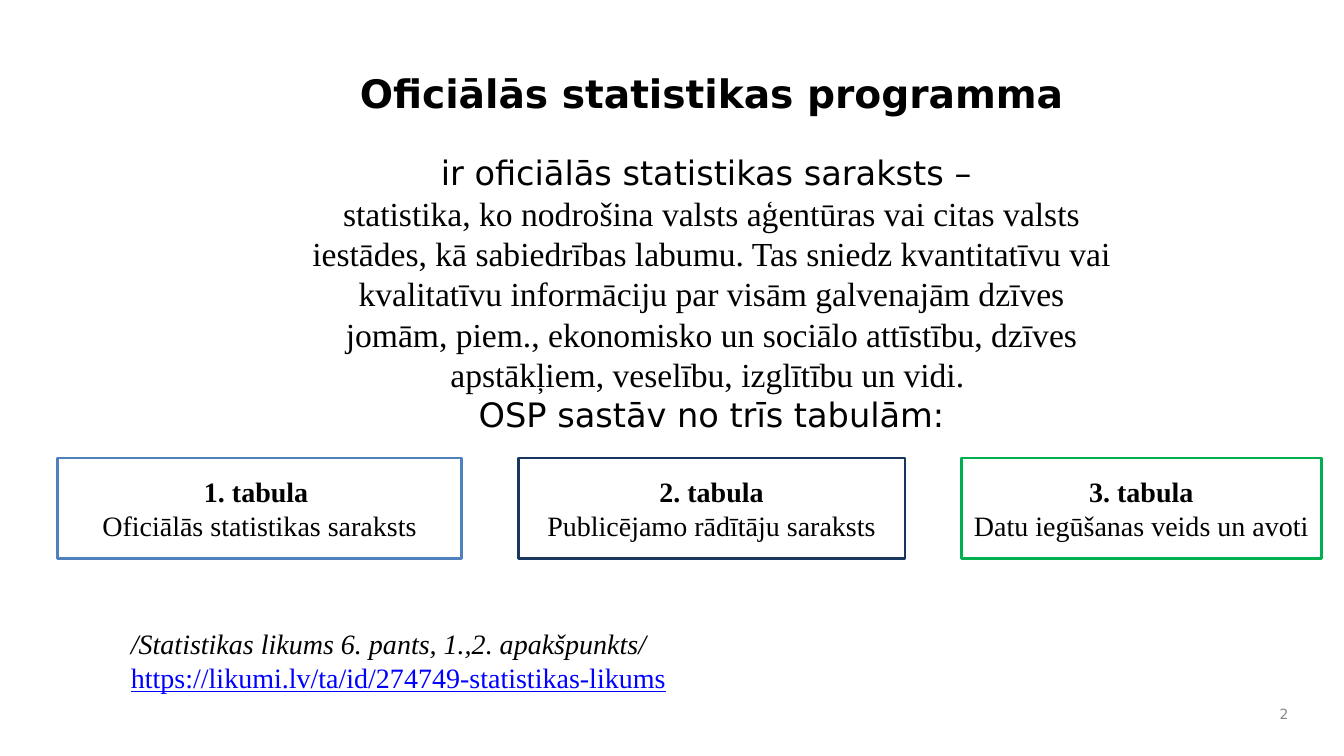
from dataclasses import dataclass

from pptx import Presentation
from pptx.dml.color import RGBColor
from pptx.enum.shapes import MSO_SHAPE
from pptx.enum.text import MSO_ANCHOR as Anchor
from pptx.enum.text import MSO_AUTO_SIZE as AutoSize
from pptx.enum.text import PP_ALIGN as Align
from pptx.util import Cm, Pt

BLACK = RGBColor(0x00, 0x00, 0x00)
WHITE = RGBColor(0xFF, 0xFF, 0xFF)
GREY = RGBColor(0x89, 0x89, 0x89)
LINK_BLUE = RGBColor(0x00, 0x00, 0xFF)
BLUE = RGBColor(0x4F, 0x81, 0xBD)
NAVY = RGBColor(0x17, 0x37, 0x5E)
GREEN = RGBColor(0x00, 0xB0, 0x50)

SANS = "DejaVu Sans"
SERIF = "Times New Roman"

CARD_LEFT, CARD_TOP, CARD_HEIGHT, CARD_GAP = 1.45, 11.54, 2.54, 1.42


@dataclass
class Line:
    text: str
    size: float
    font: str = SERIF
    color: RGBColor = BLACK
    bold: bool = False
    italic: bool = False
    underline: bool = False


@dataclass
class Card:
    heading: str
    text: str
    width: float
    color: RGBColor


CARDS = [
    Card("1. tabula ", "Oficiālās statistikas saraksts", 10.19, BLUE),
    Card("2. tabula", "Publicējamo rādītāju saraksts", 9.75, NAVY),
    Card("3. tabula", "Datu iegūšanas veids un avoti", 9.07, GREEN),
]

DEFINITION = [
    Line("ir oficiālās statistikas saraksts – ", 24, SANS),
    Line(
        "statistika, ko nodrošina valsts aģentūras vai citas valsts iestādes, "
        "kā sabiedrības labumu. Tas sniedz kvantitatīvu vai kvalitatīvu "
        "informāciju par visām galvenajām dzīves jomām, piem., ekonomisko un "
        "sociālo attīstību, dzīves apstākļiem, veselību, izglītību un vidi. ",
        24,
    ),
    Line("OSP sastāv no trīs tabulām:", 24, SANS),
]

SOURCE = [
    Line("/Statistikas likums 6. pants, 1.,2. apakšpunkts/", 20, italic=True),
    Line("https://likumi.lv/ta/id/274749-statistikas-likums", 20,
         color=LINK_BLUE, underline=True),
]


def write_lines(text_frame, lines: list[Line], align: Align, anchor: Anchor = Anchor.TOP) -> None:
    text_frame.text = "\n".join(line.text for line in lines)
    text_frame.word_wrap = True
    text_frame.vertical_anchor = anchor
    for paragraph, line in zip(text_frame.paragraphs, lines):
        paragraph.alignment = align
        for run in paragraph.runs:
            font = run.font
            font.name, font.size = line.font, Pt(line.size)
            font.color.rgb = line.color
            font.bold, font.italic = line.bold, line.italic
            font.underline = line.underline


def add_text(slide, left: float, top: float, width: float, height: float,
             lines: list[Line], align: Align, anchor: Anchor = Anchor.TOP) -> None:
    box = slide.shapes.add_textbox(Cm(left), Cm(top), Cm(width), Cm(height))
    write_lines(box.text_frame, lines, align, anchor)


def add_card(slide, card: Card, left: float) -> None:
    shape = slide.shapes.add_shape(
        MSO_SHAPE.RECTANGLE, Cm(left), Cm(CARD_TOP), Cm(card.width), Cm(CARD_HEIGHT))
    shape.shadow.inherit = False
    shape.fill.solid()
    shape.fill.fore_color.rgb = WHITE
    shape.line.color.rgb = card.color
    shape.line.width = Pt(2)
    lines = [Line(card.heading, 20, bold=True), Line(card.text, 20)]
    write_lines(shape.text_frame, lines, Align.CENTER, Anchor.MIDDLE)


def main() -> None:
    presentation = Presentation()
    presentation.slide_width, presentation.slide_height = Cm(33.87), Cm(19.05)
    slide = presentation.slides.add_slide(presentation.slide_layouts[5])

    # Title
    title = slide.shapes.title
    title.left, title.top, title.width, title.height = Cm(6.12), Cm(1.63), Cm(23.62), Cm(2.87)
    title.text_frame.auto_size = AutoSize.NONE
    write_lines(title.text_frame,
                [Line("Oficiālās statistikas programma", 28, SANS, bold=True)], Align.CENTER)

    # Definition, legal source and slide number
    add_text(slide, 7.42, 3.71, 21.03, 7.44, DEFINITION, Align.CENTER)
    add_text(slide, 3.05, 15.67, 16.94, 1.96, SOURCE, Align.LEFT)
    add_text(slide, 31.6, 17.58, 1.12, 0.84, [Line("2", 10, SANS, GREY)],
             Align.RIGHT, Anchor.MIDDLE)

    # Row of tables
    left = CARD_LEFT
    for card in CARDS:
        add_card(slide, card, left)
        left += card.width + CARD_GAP

    presentation.save("out.pptx")


if __name__ == "__main__":
    main()
